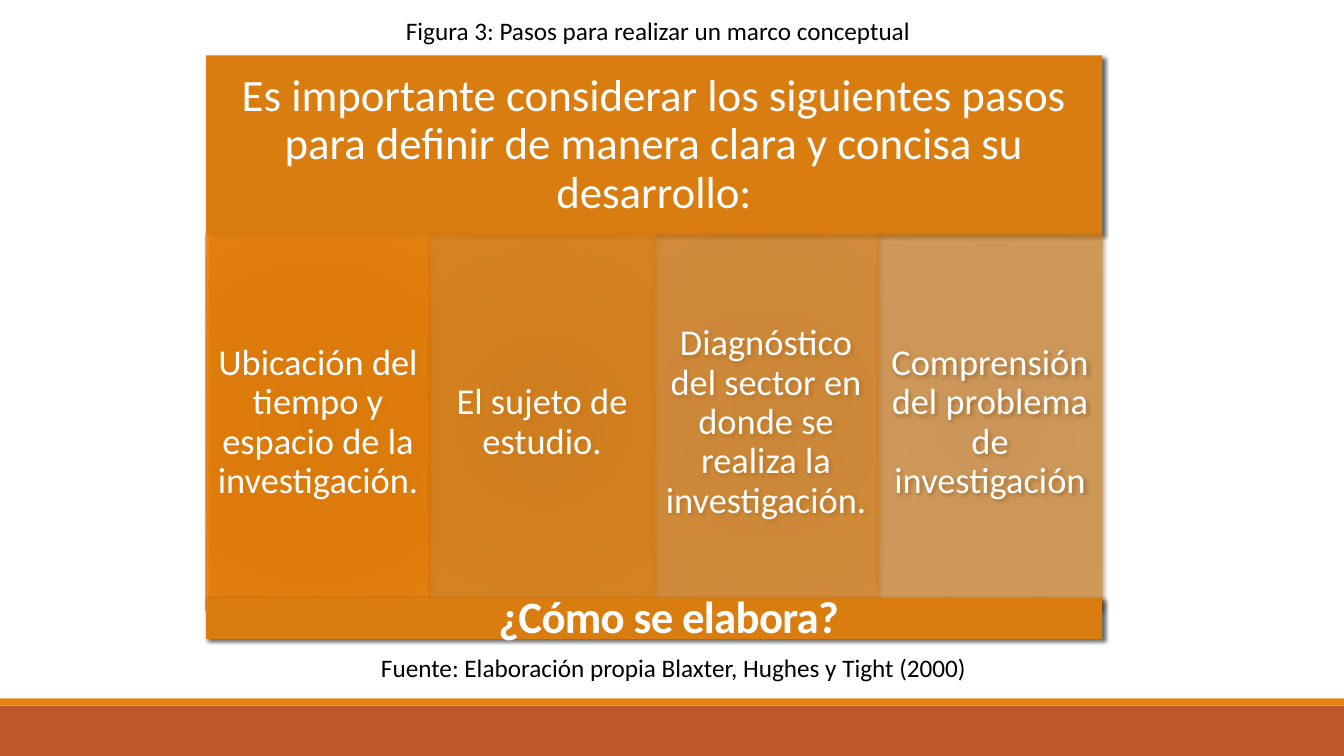
"""Build the slide with the steps for writing a conceptual framework."""
from dataclasses import dataclass

from pptx import Presentation, util as u
from pptx.dml.color import RGBColor
from pptx.enum import shapes, text
from pptx.oxml import parse_xml
from pptx.oxml.ns import nsdecls, qn

WHITE = RGBColor(0xFF, 0xFF, 0xFF)
BLACK = RGBColor(0, 0, 0)
RUST = RGBColor(0xBD, 0x58, 0x2C)
AMBER = RGBColor(0xE4, 0x83, 0x12)
BAND = RGBColor(0xDA, 0x7D, 0x11)
STEP_STOPS = {
    0: RGBColor(0xE5, 0x7B, 0x00),
    34: RGBColor(0xE8, 0x7D, 0x00),
    70: RGBColor(0xEB, 0x7E, 0x00),
    100: RGBColor(0xEF, 0x84, 0x07),
}

FONT = "Calibri"
SLIDE_WIDTH, SLIDE_HEIGHT = u.Inches(13.33), u.Inches(7.5)
COLUMN, ROW = SLIDE_WIDTH / 6, SLIDE_HEIGHT / 18
DIAGRAM_LEFT, DIAGRAM_COLUMNS = 0.92, 4
STEPS_TOP, STEPS_ROWS = 5.59, 8.95


@dataclass
class Area:
    """A place on the slide, in columns and rows of the grid."""
    left: float
    top: float
    columns: float
    rows: float

    def lengths(self) -> tuple[int, int, int, int]:
        """Return left, top, width and height."""
        return (round(self.left * COLUMN), round(self.top * ROW),
                round(self.columns * COLUMN), round(self.rows * ROW))


@dataclass
class Panel:
    """A rectangle with optional text, transparency and shadow."""
    area: Area
    color: RGBColor = BAND
    words: str = ""
    size: int = 32
    inset: float = 0.13
    opacity: int = 100
    shadow: bool = True


@dataclass
class Caption:
    """A centred line of text outside the diagram."""
    area: Area
    words: str


STEPS = [
    "Ubicación del tiempo y espacio de la investigación. ",
    "El sujeto de estudio.",
    "Diagnóstico del sector en donde se realiza la investigación.",
    "Comprensión del problema de investigación",
]
STEP_PANELS = [
    Panel(Area(DIAGRAM_LEFT + index, STEPS_TOP, 1, STEPS_ROWS), words=words,
          size=26, inset=0.11, opacity=round(90 - index * 40 / 3))
    for index, words in enumerate(STEPS)
]
PANELS = [
    Panel(Area(0, 16.8, 6, 1.2), RUST, shadow=False),
    Panel(Area(0, 16.63, 6, 0.17), AMBER, shadow=False),
    Panel(Area(DIAGRAM_LEFT, 1.32, DIAGRAM_COLUMNS, 4.27),
          words="Es importante considerar los siguientes pasos para definir "
                "de manera clara y concisa su desarrollo:"),
    *STEP_PANELS,
    Panel(Area(DIAGRAM_LEFT, 14.23, DIAGRAM_COLUMNS, 0.98)),
]
CAPTIONS = [
    Caption(Area(1.41, 0.26, 3.08, 0.94),
            "Figura 3: Pasos para realizar un marco conceptual "),
    Caption(Area(1.48, 15.41, 3.08, 0.94),
            "Fuente: Elaboración propia Blaxter, Hughes y Tight (2000) "),
]
TITLE_AREA = Area(2.18, 14.09, 2.74, 2.38)


def write(frame, words: str, size: int, color: RGBColor,
          alignment=text.PP_ALIGN.CENTER, anchor=text.MSO_ANCHOR.MIDDLE,
          spacing: float = 1.0, bold: bool = False):
    """Write one formatted paragraph and return its run."""
    frame.text = words
    frame.word_wrap = True
    frame.auto_size = text.MSO_AUTO_SIZE.NONE
    frame.vertical_anchor = anchor
    paragraph = frame.paragraphs[0]
    paragraph.alignment = alignment
    paragraph.line_spacing = spacing
    run = paragraph.runs[0]
    run.font.name, run.font.size, run.font.bold = FONT, u.Pt(size), bold
    run.font.color.rgb = color
    return run


def fill_radial(shape, opacity: int) -> None:
    """Give the shape a translucent circular gradient."""
    stops = "".join(
        f'<a:gs pos="{position * 1000}"><a:srgbClr val="{color}">'
        f'<a:alpha val="{opacity * 1000}"/></a:srgbClr></a:gs>'
        for position, color in STEP_STOPS.items())
    gradient = parse_xml(
        f'<a:gradFill {nsdecls("a")} rotWithShape="1"><a:gsLst>{stops}</a:gsLst>'
        '<a:path path="circle"><a:fillToRect l="100000" t="100000" '
        'r="100000" b="100000"/></a:path></a:gradFill>')
    shape.fill.background()
    properties = shape.element.spPr
    properties.replace(properties.find(qn("a:noFill")), gradient)


def cast_shadow(shape) -> None:
    """Add a soft shadow towards the lower right."""
    effects = shape.element.spPr.find(qn("a:effectLst"))
    effects.append(parse_xml(
        f'<a:outerShdw {nsdecls("a")} blurRad="{u.Pt(3)}" dist="{u.Pt(2)}" '
        'dir="2700000" algn="tl" rotWithShape="0"><a:srgbClr val="000000">'
        '<a:alpha val="60000"/></a:srgbClr></a:outerShdw>'))


def draw_panel(slide, panel: Panel) -> None:
    """Draw one rectangle of the slide."""
    shape = slide.shapes.add_shape(shapes.MSO_SHAPE.RECTANGLE, *panel.area.lengths())
    shape.line.fill.background()
    shape.shadow.inherit = False
    if panel.opacity < 100:
        fill_radial(shape, panel.opacity)
    else:
        shape.fill.solid()
        shape.fill.fore_color.rgb = panel.color
    if panel.shadow:
        cast_shadow(shape)
    if panel.words:
        frame = shape.text_frame
        write(frame, panel.words, panel.size, WHITE, spacing=0.9)
        frame.margin_left = frame.margin_right = u.Inches(panel.inset)
        frame.margin_top = frame.margin_bottom = u.Inches(panel.inset)


def draw_caption(slide, caption: Caption) -> None:
    """Draw one caption."""
    box = slide.shapes.add_textbox(*caption.area.lengths())
    write(box.text_frame, caption.words, 18, BLACK)


def place_title(slide) -> None:
    """Format the title and bring it in front of the lower band."""
    title = slide.shapes.title
    title.left, title.top, title.width, title.height = TITLE_AREA.lengths()
    run = write(title.text_frame, "¿Cómo se elabora?", 32, WHITE,
                text.PP_ALIGN.LEFT, text.MSO_ANCHOR.TOP, 0.85, True)
    run.font._element.set("spc", "-50")
    title.element.getparent().append(title.element)


def main() -> None:
    """Build and save the presentation."""
    presentation = Presentation()
    presentation.slide_width, presentation.slide_height = SLIDE_WIDTH, SLIDE_HEIGHT
    slide = presentation.slides.add_slide(presentation.slide_layouts[5])
    for panel in PANELS:
        draw_panel(slide, panel)
    place_title(slide)
    for caption in CAPTIONS:
        draw_caption(slide, caption)
    presentation.save("out.pptx")


if __name__ == "__main__":
    main()
